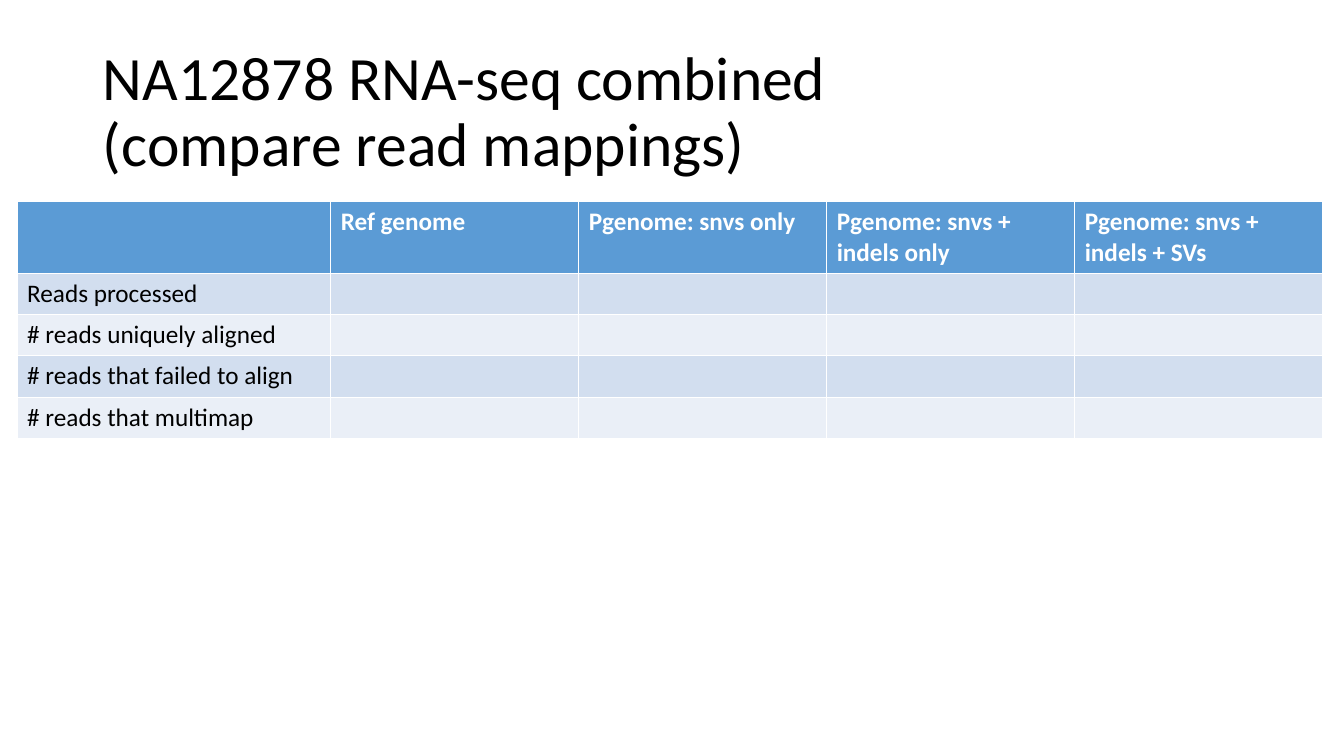
"""Build a slide with an empty table comparing read mappings across genomes."""
from pptx import Presentation
from pptx.dml.color import RGBColor
from pptx.enum.text import MSO_ANCHOR, MSO_AUTO_SIZE, PP_ALIGN
from pptx.util import Inches, Pt

LEFT = PP_ALIGN.LEFT
MIDDLE = MSO_ANCHOR.MIDDLE
NO_AUTOFIT = MSO_AUTO_SIZE.NONE
TITLE_ONLY = 5

TITLE_LINES = ["NA12878 RNA-seq combined", "(compare read mappings)"]
GENOMES = [
    "Ref genome",
    "Pgenome: snvs only",
    "Pgenome: snvs + indels only",
    "Pgenome: snvs + indels + SVs",
]
MEASURES = [
    "Reads processed",
    "# reads uniquely aligned",
    "# reads that failed to align",
    "# reads that multimap",
]

FONT = "Calibri"
COLORS = {
    "text": "000000",
    "header_text": "FFFFFF",
    "header": "5B9BD5",
    "odd_band": "D2DEEF",
    "even_band": "EAEFF7",
}
SLIDE_SIZE = (13.33, 7.5)
TITLE_BOX = (0.92, 0.4, 11.5, 1.45)
TABLE_LEFT, TABLE_TOP, TABLE_HEIGHT = 0.17, 2, 2.32
COLUMN_WIDTHS = [3.11] + [2.46] * len(GENOMES)
ROW_HEIGHT = 0.41


def color(name):
    return RGBColor.from_string(COLORS[name])


def add_run(paragraph, text, size, color_name, bold=False):
    run = paragraph.add_run()
    run.text = text
    run.font.name = FONT
    run.font.size = Pt(size)
    run.font.bold = bold
    run.font.color.rgb = color(color_name)


def add_title(slide):
    title = slide.shapes.title
    title.left, title.top, title.width, title.height = map(Inches, TITLE_BOX)
    frame = title.text_frame
    frame.word_wrap = True
    frame.auto_size = NO_AUTOFIT
    frame.vertical_anchor = MIDDLE
    paragraph = frame.paragraphs[0]
    paragraph.alignment = LEFT
    paragraph.line_spacing = 0.9
    for index, line in enumerate(TITLE_LINES):
        if index:
            paragraph.add_line_break()
        add_run(paragraph, line, 44, "text")


def add_mapping_table(slide):
    rows = [[""] + GENOMES]
    rows += [[measure] + [""] * len(GENOMES) for measure in MEASURES]
    table_shape = slide.shapes.add_table(
        len(rows), len(COLUMN_WIDTHS), Inches(TABLE_LEFT), Inches(TABLE_TOP),
        Inches(sum(COLUMN_WIDTHS)), Inches(TABLE_HEIGHT))
    table = table_shape.table
    for column, width in zip(table.columns, COLUMN_WIDTHS):
        column.width = Inches(width)
    for row_index, texts in enumerate(rows):
        table.rows[row_index].height = Inches(ROW_HEIGHT)
        is_header = row_index == 0
        band = "odd_band" if row_index % 2 else "even_band"
        for column_index, text in enumerate(texts):
            cell = table.cell(row_index, column_index)
            cell.fill.solid()
            cell.fill.fore_color.rgb = color("header" if is_header else band)
            if text:
                add_run(cell.text_frame.paragraphs[0], text, 18,
                        "header_text" if is_header else "text", is_header)
    table_shape.height = Inches(TABLE_HEIGHT)


def main():
    presentation = Presentation()
    presentation.slide_width, presentation.slide_height = map(Inches, SLIDE_SIZE)
    slide = presentation.slides.add_slide(presentation.slide_layouts[TITLE_ONLY])
    add_title(slide)
    add_mapping_table(slide)
    presentation.save("out.pptx")


if __name__ == "__main__":
    main()
